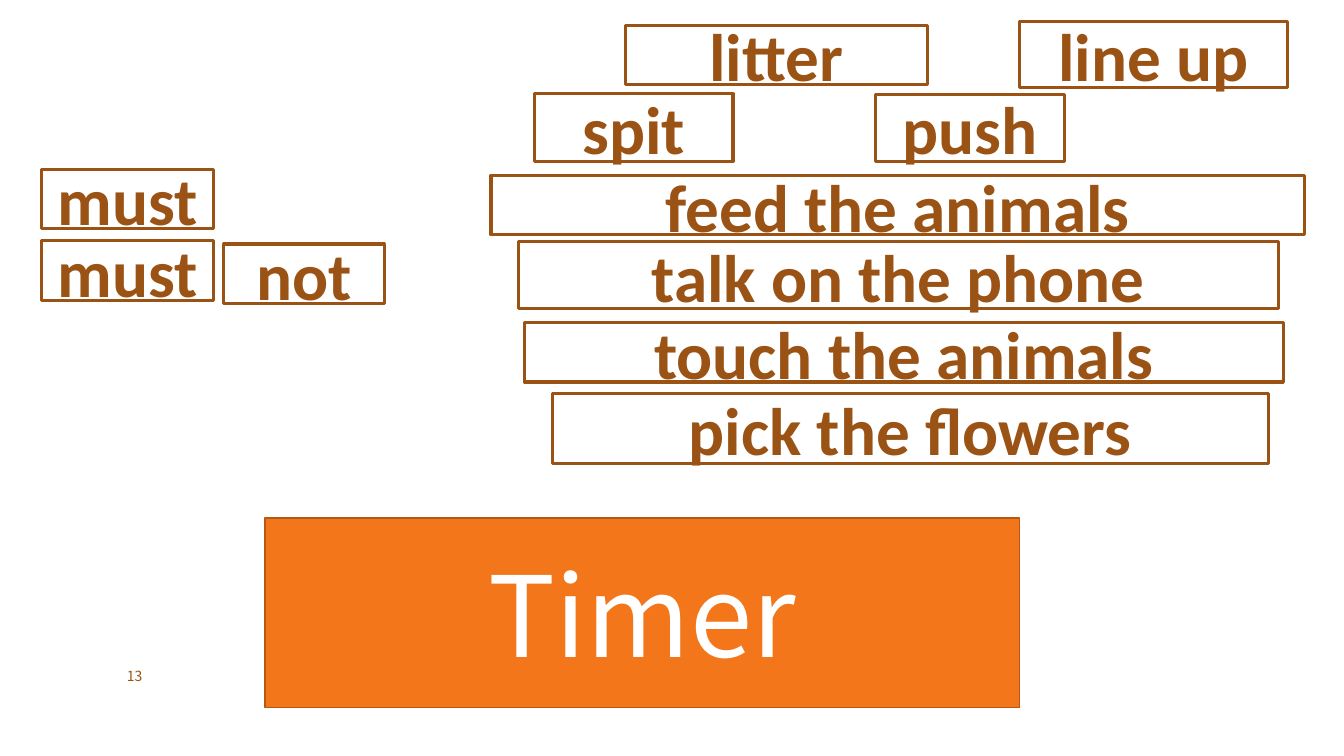
from pptx import Presentation
from pptx.dml.color import RGBColor
from pptx.enum.shapes import MSO_SHAPE
from pptx.enum.text import MSO_ANCHOR, PP_ALIGN
from pptx.util import Pt

PX = 9144
COLORS = {"brown": "9A5315", "orange": "F3771A", "edge": "B45813", "white": "FFFFFF"}
WORD_FONT = "Calibri"
BASE_FONT = "Noto Sans CJK TC"


class Board:
    def __init__(self, prs):
        self.s = prs.slides.add_slide(prs.slide_layouts[6])

    def color(self, name):
        return RGBColor.from_string(COLORS[name])

    def label(self, sp, text, size, font, color, align, bold=False):
        tf = sp.text_frame
        tf.word_wrap = True
        tf.vertical_anchor = MSO_ANCHOR.MIDDLE
        p = tf.paragraphs[0]
        p.alignment = align
        r = p.add_run()
        r.text = text
        r.font.size = Pt(size)
        r.font.name = font
        r.font.bold = bold
        r.font.color.rgb = self.color(color)

    def box(self, at, fill, line, width):
        sp = self.s.shapes.add_shape(MSO_SHAPE.RECTANGLE, *(v * PX for v in at))
        sp.shadow.inherit = False
        sp.fill.solid()
        sp.fill.fore_color.rgb = self.color(fill)
        sp.line.color.rgb = self.color(line)
        sp.line.width = Pt(width)
        return sp

    def word(self, text, *at):
        sp = self.box(at, "white", "brown", 2.25)
        self.label(sp, text, 48, WORD_FONT, "brown", PP_ALIGN.CENTER, True)

    def timer(self, text, *at):
        sp = self.box(at, "orange", "edge", 1)
        self.label(sp, text, 80, BASE_FONT, "white", PP_ALIGN.CENTER)

    def number(self, text, *at):
        sp = self.s.shapes.add_textbox(*(v * PX for v in at))
        self.label(sp, text, 10, BASE_FONT, "brown", PP_ALIGN.LEFT)


def main():
    prs = Presentation()
    prs.slide_width = 1333 * PX
    prs.slide_height = 750 * PX
    board = Board(prs)
    words = [
        ("line up", 1011, 21, 266, 66),
        ("push", 868, 94, 188, 66),
        ("talk on the phone", 514, 240, 754, 66),
        ("spit", 530, 93, 197, 67),
        ("litter", 620, 25, 300, 59),
        ("touch the animals", 520, 320, 753, 59),
        ("feed the animals", 487, 174, 807, 59),
        ("pick the flowers", 548, 390, 710, 70),
        ("must", 41, 168, 171, 59),
        ("not", 222, 242, 159, 59),
        ("must", 41, 239, 171, 59),
    ]
    for word in words:
        board.word(*word)
    board.timer("Timer", 263, 514, 748, 188)
    board.number("13", 116, 658, 83, 25)
    prs.save("out.pptx")


if __name__ == "__main__":
    main()
